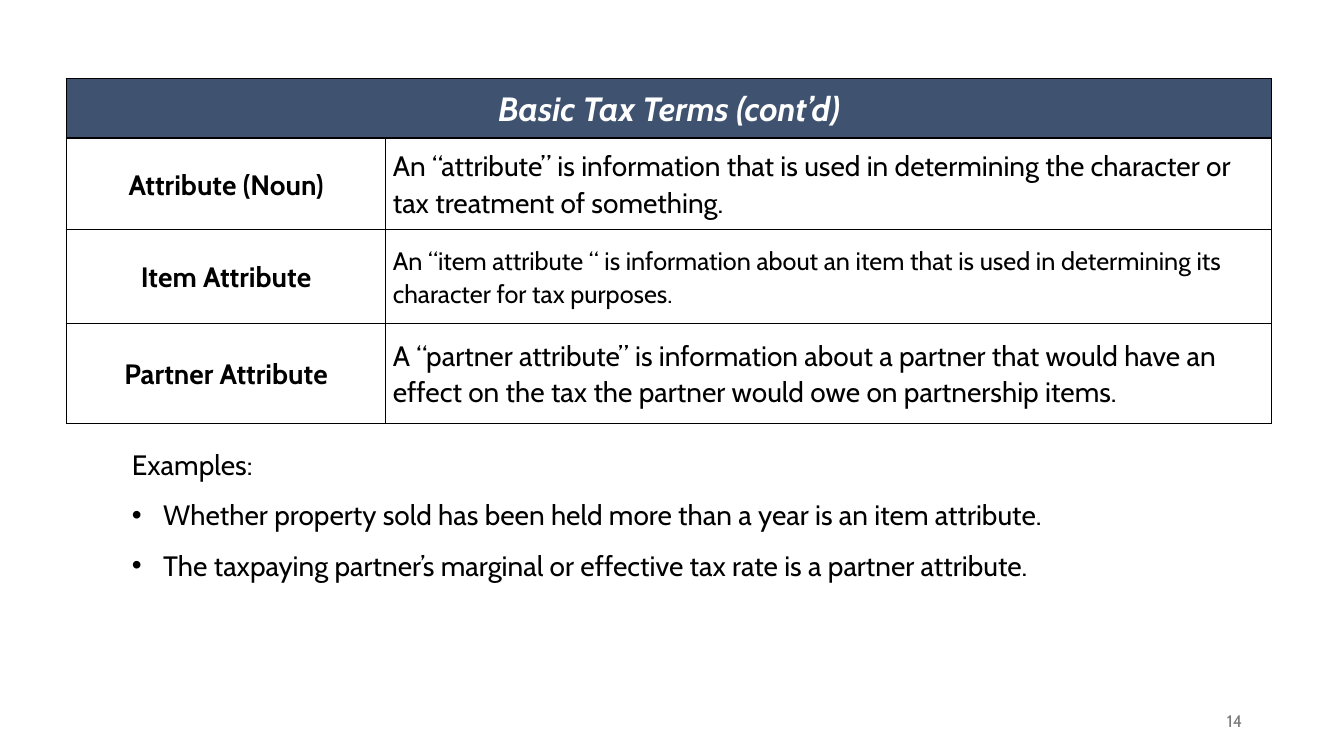
from collections import namedtuple
from dataclasses import dataclass

from lxml.etree import SubElement
from pptx import Presentation
from pptx.dml.color import RGBColor
from pptx.enum.text import MSO_ANCHOR, PP_ALIGN
from pptx.oxml.ns import qn
from pptx.util import Inches, Pt

Box = namedtuple("Box", "left top width height")


@dataclass(frozen=True)
class Theme:
    font: str = "Cabin"
    ink: str = "000000"
    paper: str = "FFFFFF"
    band: str = "3F5371"
    muted: str = "797979"
    heading: int = 24
    body: int = 20
    compact: int = 18
    footer: int = 12
    rule: int = 1


THEME = Theme()
SLIDE = Box(0, 0, Inches(13.33), Inches(7.5))

# Shares of the slide: left, top, width, height
TERMS_AREA = (0.0495, 0.104, 0.8965, 0.456)
EXAMPLES_AREA = (0.0908, 0.5853, 0.8185, 0.1933)
NUMBER_AREA = (0.7067, 0.9267, 0.225, 0.0533)

COLUMN_SHARES = (0.265, 0.735)
ROW_SHARES = (0.1725, 0.266, 0.272, 0.2895)

HEADING = "Basic Tax Terms (cont’d)"
TERMS = [
    ("Attribute (Noun)",
     "An “attribute” is information that is used in determining the "
     "character or tax treatment of something.", THEME.body),
    ("Item Attribute",
     "An “item attribute “ is information about an item that is used in "
     "determining its character for tax purposes.", THEME.compact),
    ("Partner Attribute",
     "A “partner attribute” is information about a partner that would have "
     "an effect on the tax the partner would owe on partnership items.",
     THEME.body),
]
EXAMPLES = [
    "Whether property sold has been held more than a year is an item attribute.",
    "The taxpaying partner’s marginal or effective tax rate is a partner attribute.",
]

CELL_FORMAT = {
    "margin_left": Inches(0.07), "margin_right": Inches(0.07),
    "margin_top": 0, "margin_bottom": 0,
    "vertical_anchor": MSO_ANCHOR.MIDDLE,
}
CELL_SPACING = {"line_spacing": 1.07, "space_after": Pt(6)}
EXAMPLE_SPACING = {"space_before": Pt(6), "space_after": Pt(6)}


def part_of(box, shares):
    left, top, width, height = shares
    return Box(round(box.left + left * box.width),
               round(box.top + top * box.height),
               round(width * box.width), round(height * box.height))


def apply(target, values):
    for name, value in values.items():
        setattr(target, name, value)


def write(paragraph, text, size, color=THEME.ink, layout=None, **style):
    run = paragraph.add_run()
    run.text = text
    apply(run.font, {"name": THEME.font, "size": Pt(size), **style})
    run.font.color.rgb = RGBColor.from_string(color)
    apply(paragraph, layout or {})


def add_bullet(paragraph, indent=Inches(0.31)):
    properties = paragraph._p.get_or_add_pPr()
    properties.set("marL", str(indent))
    properties.set("indent", str(-indent))
    SubElement(properties, qn("a:buFont"), typeface="Arial")
    SubElement(properties, qn("a:buChar"), char="•")


def rule_cell(cell):
    """Draw a thin line on all four sides of the cell."""
    properties = cell._tc.get_or_add_tcPr()
    for position, side in enumerate(("lnL", "lnR", "lnT", "lnB")):
        line = SubElement(properties, qn(f"a:{side}"), w=str(Pt(THEME.rule)))
        fill = SubElement(line, qn("a:solidFill"))
        SubElement(fill, qn("a:srgbClr"), val=THEME.ink)
        properties.insert(position, line)


def add_terms_table(slide, box):
    table = slide.shapes.add_table(
        len(ROW_SHARES), len(COLUMN_SHARES), *box).table
    for column, share in zip(table.columns, COLUMN_SHARES):
        column.width = round(share * box.width)
    for row, share in zip(table.rows, ROW_SHARES):
        row.height = round(share * box.height)
    for cell in table.iter_cells():
        apply(cell, CELL_FORMAT)
        cell.fill.background()
        rule_cell(cell)

    centred = {"alignment": PP_ALIGN.CENTER, **CELL_SPACING}
    heading = table.cell(0, 0)
    heading.merge(table.cell(0, 1))
    heading.fill.solid()
    heading.fill.fore_color.rgb = RGBColor.from_string(THEME.band)
    write(heading.text_frame.paragraphs[0], HEADING, THEME.heading,
          THEME.paper, centred, bold=True, italic=True)
    for row, (term, meaning, size) in enumerate(TERMS, start=1):
        term_line, meaning_line = (
            table.cell(row, column).text_frame.paragraphs[0]
            for column in range(2))
        write(term_line, term, THEME.body, layout=centred,
              bold=True, italic=False)
        write(meaning_line, meaning, size, layout=CELL_SPACING,
              bold=False, italic=False)


def add_examples(slide, box):
    frame = slide.shapes.add_textbox(*box).text_frame
    frame.word_wrap = True
    write(frame.paragraphs[0], "Examples:", THEME.body, layout=EXAMPLE_SPACING)
    for example in EXAMPLES:
        paragraph = frame.add_paragraph()
        write(paragraph, example, THEME.body, layout=EXAMPLE_SPACING)
        add_bullet(paragraph)


def add_page_number(slide, box):
    frame = slide.shapes.add_textbox(*box).text_frame
    apply(frame, {"word_wrap": True, "vertical_anchor": MSO_ANCHOR.MIDDLE})
    write(frame.paragraphs[0], "14", THEME.footer, THEME.muted,
          {"alignment": PP_ALIGN.RIGHT})


def main():
    deck = Presentation()
    apply(deck, {"slide_width": SLIDE.width, "slide_height": SLIDE.height})
    slide = deck.slides.add_slide(deck.slide_layouts[6])
    add_terms_table(slide, part_of(SLIDE, TERMS_AREA))
    add_examples(slide, part_of(SLIDE, EXAMPLES_AREA))
    add_page_number(slide, part_of(SLIDE, NUMBER_AREA))
    deck.save("out.pptx")


if __name__ == "__main__":
    main()
